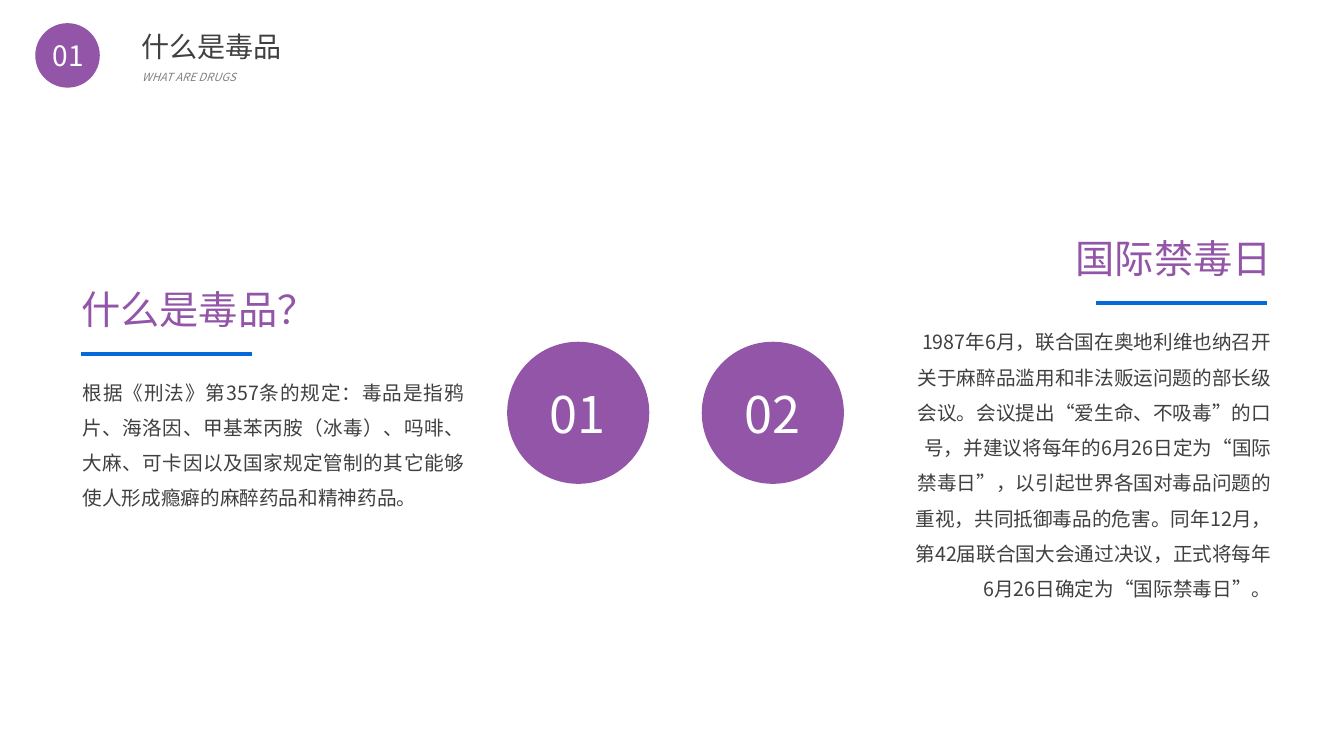
"""Build the slide on what drugs are and the international anti-drug day."""
from typing import NamedTuple

from lxml.etree import SubElement
from pptx import Presentation
from pptx.dml.color import RGBColor
from pptx.enum.shapes import MSO_CONNECTOR, MSO_SHAPE
from pptx.enum.text import MSO_ANCHOR, MSO_AUTO_SIZE, PP_ALIGN
from pptx.oxml.ns import qn
from pptx.util import Inches, Pt

FONT = "Noto Sans CJK SC"
PURPLE, BLUE, WHITE, DARK, GREY = "9355A8", "0569D9", "FFFFFF", "404040", "808080"
LEFT, RIGHT, CENTER, JUSTIFY = PP_ALIGN.LEFT, PP_ALIGN.RIGHT, PP_ALIGN.CENTER, PP_ALIGN.JUSTIFY


class Box(NamedTuple):
    left: float
    top: float
    width: float
    height: float


class Badge(NamedTuple):
    number: str
    disc: Box
    label: Box
    size: int


class Topic(NamedTuple):
    heading: str
    heading_box: Box
    heading_align: PP_ALIGN
    rule_left: float
    rule_top: float
    body: str
    body_box: Box
    body_align: PP_ALIGN


BADGES = [
    Badge("01", Box(0.35, 0.23, 0.64, 0.64), Box(0.34, 0.33, 0.67, 0.43), 20),
    Badge("01", Box(5.03, 3.39, 1.41, 1.41), Box(5.22, 3.75, 1.01, 0.7), 36),
    Badge("02", Box(6.96, 3.39, 1.41, 1.41), Box(7.16, 3.75, 1.01, 0.7), 36),
]
TOPICS = [
    Topic(
        "什么是毒品？", Box(0.71, 2.78, 4.25, 0.57), LEFT, 0.8, 3.51,
        "根据《刑法》第357条的规定：毒品是指鸦片、海洛因、甲基苯丙胺（冰毒）、吗啡、"
        "大麻、可卡因以及国家规定管制的其它能够使人形成瘾癖的麻醉药品和精神药品。",
        Box(0.72, 3.61, 3.98, 1.5), JUSTIFY,
    ),
    Topic(
        "国际禁毒日", Box(9.08, 2.28, 3.63, 0.57), RIGHT, 10.87, 3.01,
        "1987年6月，联合国在奥地利维也纳召开关于麻醉品滥用和非法贩运问题的部长级会议。"
        "会议提出“爱生命、不吸毒”的口号，并建议将每年的6月26日定为“国际禁毒日”，"
        "以引起世界各国对毒品问题的重视，共同抵御毒品的危害。同年12月，"
        "第42届联合国大会通过决议，正式将每年6月26日确定为“国际禁毒日”。",
        Box(8.94, 3.11, 3.77, 2.9), RIGHT,
    ),
]
RULE_WIDTH = 1.7


def rgb(value: str) -> RGBColor:
    return RGBColor.from_string(value)


def place(s, box: Box) -> None:
    s.left, s.top, s.width, s.height = map(Inches, box)


def write(s, text: str, *, size: float, color: str, align: PP_ALIGN = LEFT,
          italic: bool = False, spacing: float = 1.0, after: float = 0) -> None:
    tf = s.text_frame
    tf.word_wrap = True
    tf.auto_size = MSO_AUTO_SIZE.NONE
    tf.vertical_anchor = MSO_ANCHOR.TOP
    p = tf.paragraphs[0]
    p.alignment, p.line_spacing, p.space_after = align, spacing, Pt(after)
    r = p.add_run()
    r.text = text
    r.font.name, r.font.size, r.font.italic = FONT, Pt(size), italic
    r.font.color.rgb = rgb(color)
    SubElement(r.font._element, qn("a:ea")).set("typeface", FONT)


def add_text(slide, box: Box, text: str, **fmt) -> None:
    write(slide.shapes.add_textbox(*map(Inches, box)), text, **fmt)


def add_badge(slide, badge: Badge) -> None:
    sp = slide.shapes.add_shape(MSO_SHAPE.OVAL, *map(Inches, badge.disc))
    sp.shadow.inherit = False
    sp.fill.solid()
    sp.fill.fore_color.rgb = rgb(PURPLE)
    sp.line.fill.background()
    add_text(slide, badge.label, badge.number, size=badge.size, color=WHITE, align=CENTER)


def add_rule(slide, left: float, top: float) -> None:
    ends = map(Inches, (left, top, left + RULE_WIDTH, top))
    line = slide.shapes.add_connector(MSO_CONNECTOR.STRAIGHT, *ends)
    line.line.color.rgb = rgb(BLUE)
    line.line.width = Pt(3)
    SubElement(line._element.spPr, qn("a:effectLst"))


def add_topic(slide, topic: Topic) -> None:
    add_text(slide, topic.heading_box, topic.heading, size=28, color=PURPLE,
             align=topic.heading_align)
    add_rule(slide, topic.rule_left, topic.rule_top)
    add_text(slide, topic.body_box, topic.body, size=14, color=DARK,
             align=topic.body_align, spacing=1.5, after=6)


def main() -> None:
    prs = Presentation()
    prs.slide_width, prs.slide_height = Inches(13.33), Inches(7.5)
    slide = prs.slides.add_slide(prs.slide_layouts[5])
    title = slide.shapes.title
    place(title, Box(1.3, 0.24, 1.68, 0.43))
    write(title, "什么是毒品", size=20, color=DARK, align=JUSTIFY)
    add_text(slide, Box(1.31, 0.65, 2.54, 0.23), "WHAT ARE DRUGS", size=8,
             color=GREY, align=JUSTIFY, italic=True)
    for badge in BADGES:
        add_badge(slide, badge)
    for topic in TOPICS:
        add_topic(slide, topic)
    prs.save("out.pptx")


if __name__ == "__main__":
    main()
